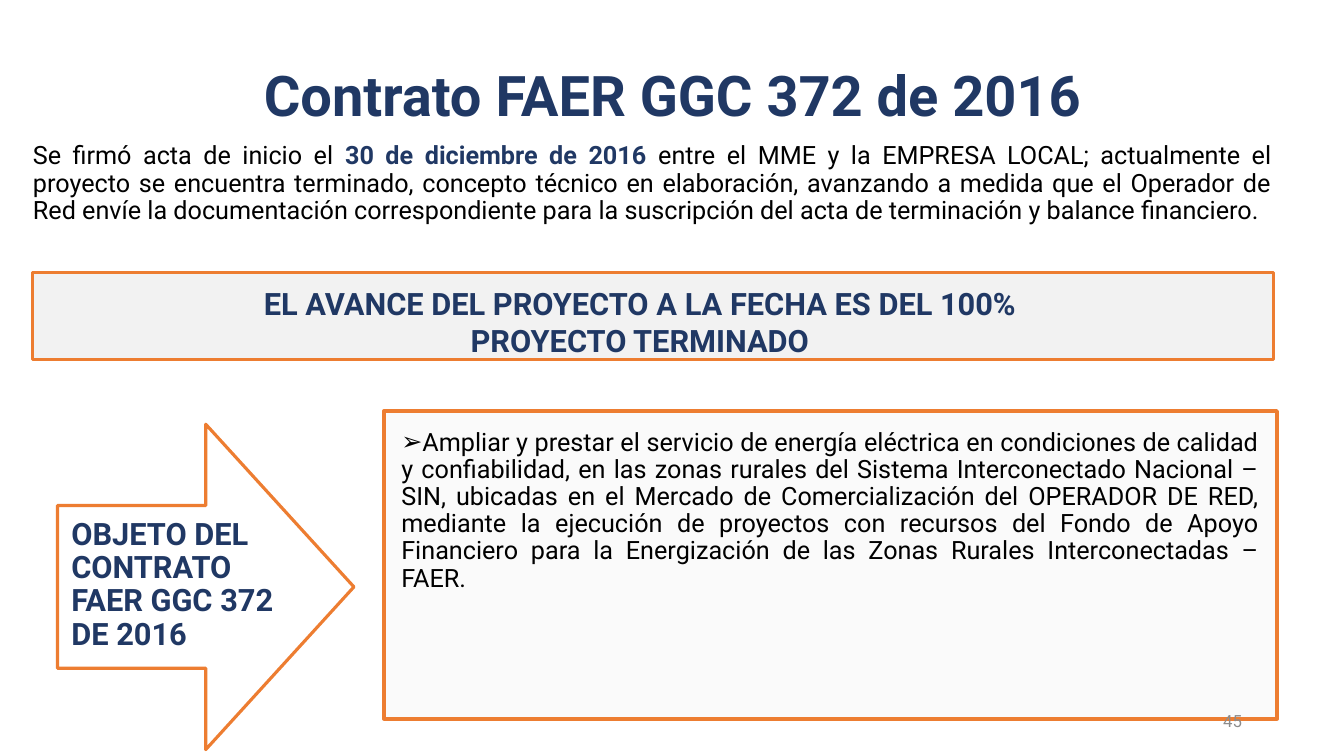
from lxml import etree
from pptx import Presentation
from pptx.dml.color import RGBColor
from pptx.enum.shapes import MSO_SHAPE as Shape
from pptx.enum.text import MSO_ANCHOR as Anchor, PP_ALIGN as Align
from pptx.oxml.ns import qn
from pptx.util import Cm, Pt

COLORS = {
    "navy": "203864",
    "orange": "ED7D31",
    "panel": "F2F2F2",
    "black": "000000",
    "gray": "8C8C8C",
}
FONT = "Roboto"

INTRO = [
    ("Se firmó acta de inicio el ", False),
    ("30 de diciembre de 2016 ", True),
    ("entre el MME y la EMPRESA LOCAL; actualmente el proyecto se "
     "encuentra terminado, concepto técnico en elaboración, avanzando a medida "
     "que el Operador de Red envíe la documentación correspondiente para la "
     "suscripción del acta de terminación y balance financiero.", False),
]
PROGRESS = ["EL AVANCE DEL PROYECTO A LA FECHA ES DEL 100%", "PROYECTO TERMINADO"]
PURPOSE = (
    "Ampliar y prestar el servicio de energía eléctrica en condiciones de calidad "
    "y confiabilidad, en las zonas rurales del Sistema Interconectado Nacional – "
    "SIN, ubicadas en el Mercado de Comercialización del OPERADOR DE RED, mediante "
    "la ejecución de proyectos con recursos del Fondo de Apoyo Financiero para la "
    "Energización de las Zonas Rurales Interconectadas – FAER."
)


def color(name):
    return RGBColor.from_string(COLORS[name])


def place(shape, left, top, width, height):
    shape.left, shape.top = Cm(left), Cm(top)
    shape.width, shape.height = Cm(width), Cm(height)


def format_paragraph(paragraph, size, ink, bold=False, align=Align.LEFT, spacing=1.0):
    paragraph.alignment = align
    paragraph.line_spacing = spacing
    paragraph.space_before = Pt(0)
    font = paragraph.font
    font.name, font.size, font.bold = FONT, Pt(size), bold
    font.color.rgb = color(ink)


def add_bullet(paragraph, character):
    properties = paragraph._p.get_or_add_pPr()
    properties.set("marL", "0")
    properties.set("indent", "0")
    etree.SubElement(properties, qn("a:buChar"), char=character)


def add_text(slide, box, lines, anchor=Anchor.TOP, **style):
    """Add a wrapped text box; each line is a list of (text, highlighted) runs."""
    frame = slide.shapes.add_textbox(*map(Cm, box)).text_frame
    frame.word_wrap = True
    frame.vertical_anchor = anchor
    for index, runs in enumerate(lines):
        paragraph = frame.add_paragraph() if index else frame.paragraphs[0]
        for text, highlighted in runs:
            run = paragraph.add_run()
            run.text = text
            if highlighted:
                run.font.bold = True
                run.font.color.rgb = color("navy")
        format_paragraph(paragraph, **style)


def add_outlined(slide, kind, box, line_width, fill=None, opacity=100):
    shape = slide.shapes.add_shape(kind, *map(Cm, box))
    shape.shadow.inherit = False
    shape.line.color.rgb = color("orange")
    shape.line.width = Pt(line_width)
    if fill is None:
        shape.fill.background()
        return
    shape.fill.solid()
    shape.fill.fore_color.rgb = color(fill)
    if opacity < 100:
        fill_color = shape._element.spPr.find(qn("a:solidFill")).find(qn("a:srgbClr"))
        etree.SubElement(fill_color, qn("a:alpha"), val=str(opacity * 1000))


def fill_title(title):
    place(title, 2.34, 1.04, 29.21, 2.34)
    title.text_frame.text = "Contrato FAER GGC 372 de 2016"
    title.text_frame.vertical_anchor = Anchor.BOTTOM
    format_paragraph(title.text_frame.paragraphs[0], 40, "navy", True, Align.CENTER, 0.9)


def fill_purpose(slide, body):
    """Write the purpose as a bullet, in front of its panel."""
    slide.shapes._spTree.append(body._element)
    place(body, 9.86, 10.69, 22.12, 7.59)
    body.text_frame.text = PURPOSE
    paragraph = body.text_frame.paragraphs[0]
    add_bullet(paragraph, "➢")
    format_paragraph(paragraph, 18, "black", align=Align.JUSTIFY, spacing=0.9)


def main():
    presentation = Presentation()
    presentation.slide_width, presentation.slide_height = Cm(33.87), Cm(19.05)
    slide = presentation.slides.add_slide(presentation.slide_layouts[1])
    title, body = slide.placeholders

    fill_title(title)
    add_outlined(slide, Shape.RECTANGLE, (9.68, 10.36, 22.5, 7.75), 3, "panel", 38)
    add_outlined(slide, Shape.RECTANGLE, (0.81, 6.86, 31.29, 2.21), 2.25, "panel")
    add_text(slide, (0.58, 3.48, 31.72, 3.07), [INTRO],
             size=18, ink="black", align=Align.JUSTIFY, spacing=0.9)
    add_text(slide, (0.58, 7.04, 31.09, 2.21), [[(line, False)] for line in PROGRESS],
             size=22, ink="navy", bold=True, align=Align.CENTER)
    fill_purpose(slide, body)
    add_outlined(slide, Shape.RIGHT_ARROW, (1.45, 10.69, 7.47, 8.2), 2.25)
    add_text(slide, (1.55, 12.95, 6.38, 4.27),
             [[("OBJETO DEL CONTRATO FAER GGC 372 DE 2016", False)]],
             size=22, ink="navy", bold=True, spacing=0.9)
    add_text(slide, (23.93, 17.65, 7.62, 1.02), [[("45", False)]],
             anchor=Anchor.MIDDLE, size=12, ink="gray", align=Align.RIGHT)

    presentation.save("out.pptx")


if __name__ == "__main__":
    main()
